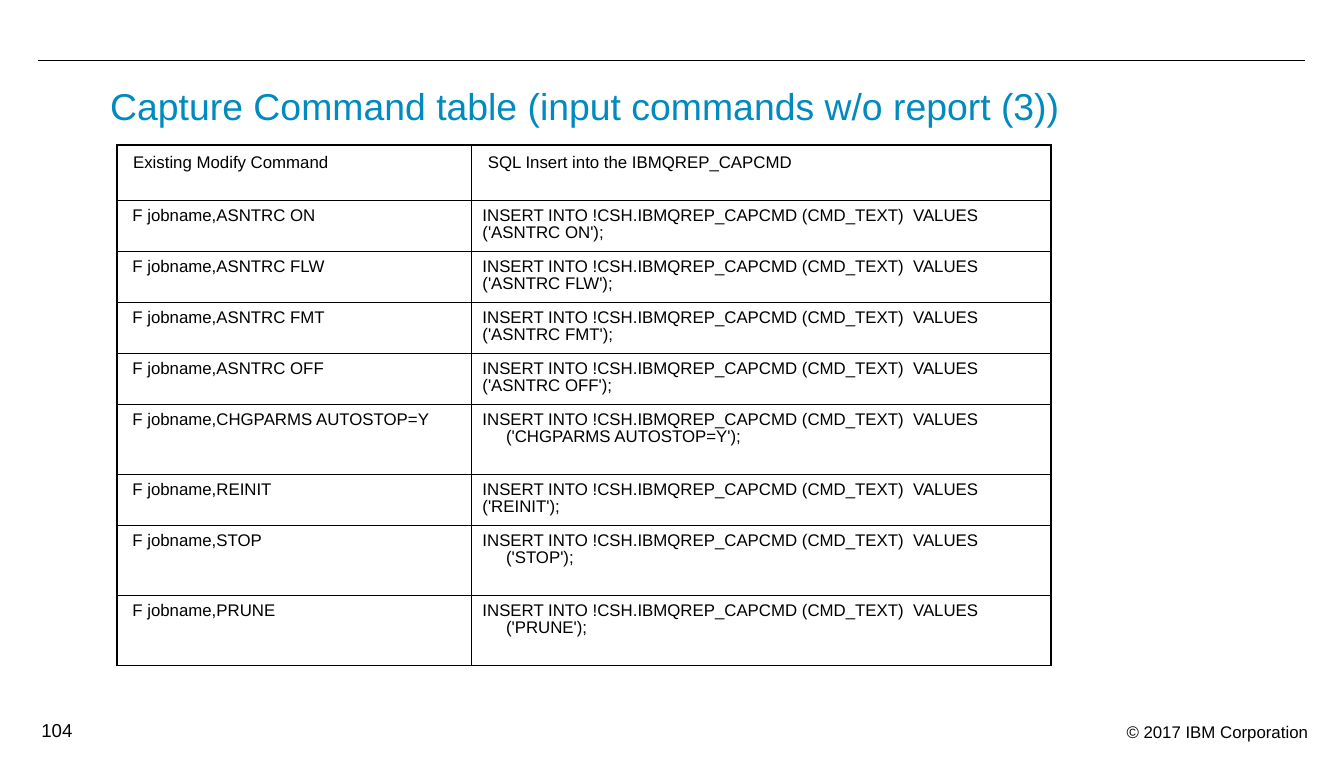
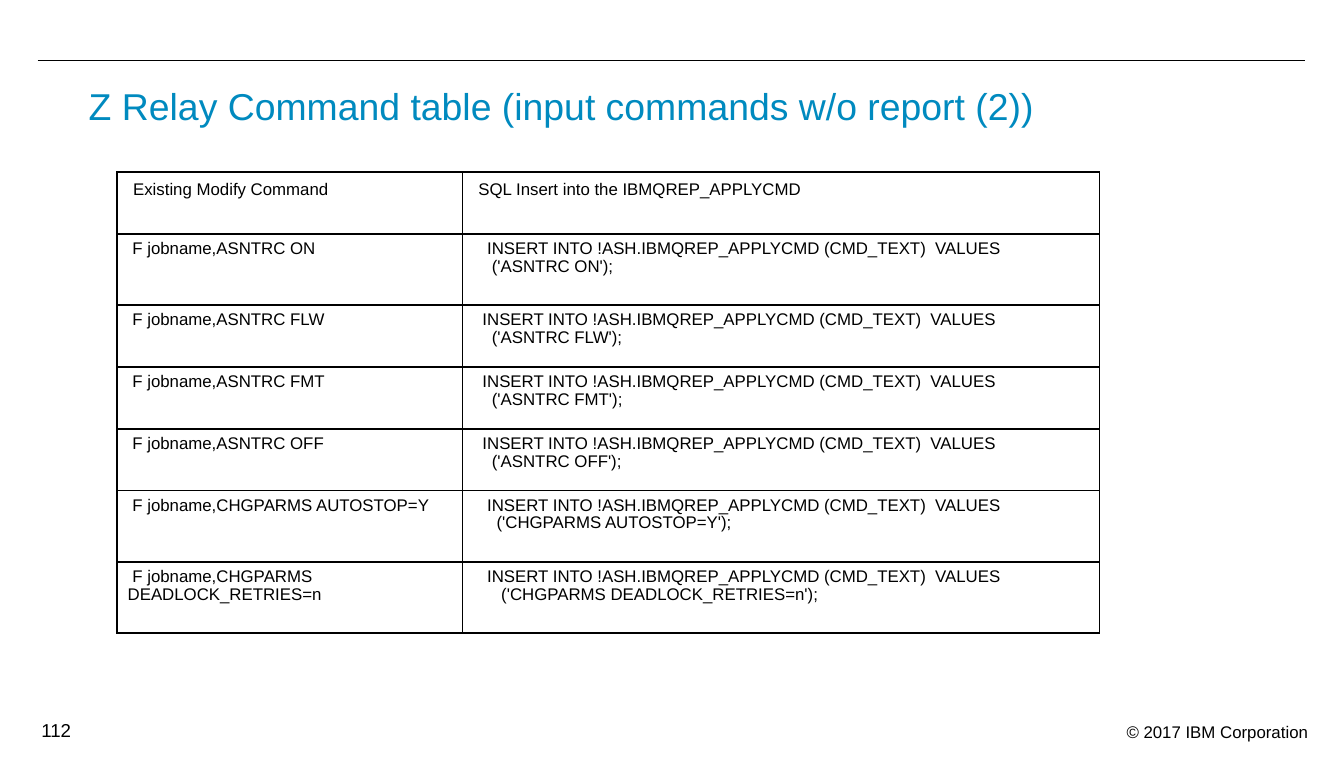
"""Build two slides that map modify commands to their SQL inserts."""
from dataclasses import dataclass

from lxml import etree
from pptx import Presentation
from pptx.dml.color import RGBColor
from pptx.enum.shapes import MSO_CONNECTOR
from pptx.enum.text import MSO_ANCHOR, MSO_AUTO_SIZE, PP_ALIGN
from pptx.oxml.ns import qn
from pptx.util import Inches, Pt

STRAIGHT = MSO_CONNECTOR.STRAIGHT
TOP = MSO_ANCHOR.TOP
NO_AUTOSIZE = MSO_AUTO_SIZE.NONE
LEFT, RIGHT = PP_ALIGN.LEFT, PP_ALIGN.RIGHT

BLACK = RGBColor(0x00, 0x00, 0x00)
TITLE_BLUE = RGBColor(0x00, 0x8A, 0xBF)
FONT = "Arial"
TITLE_ONLY_LAYOUT = 5
BORDER_WIDTH = Pt(0.91)
BORDER_TAGS = ("a:lnL", "a:lnR", "a:lnT", "a:lnB")
SPACE_WIDTH = 0.035

TITLE_FORMAT = {"name": FONT, "size": Pt(20), "bold": False, "color": TITLE_BLUE}
CELL_FORMAT = {"name": FONT, "size": Pt(9), "bold": False, "color": BLACK}
NUMBER_FORMAT = {**CELL_FORMAT, "size": Pt(10)}


@dataclass(frozen=True)
class Line:
    """A line of text with its first-line indent in inches."""

    text: str
    indent: float = 0


@dataclass(frozen=True)
class Command:
    """A command with its row height and the indents of its SQL, in spaces."""

    name: str
    height: float
    insert_indent: int = 0
    values_indent: int | None = None


@dataclass(frozen=True)
class CommandPage:
    """The content and layout of one command table slide."""

    number: int
    title: Line
    title_left: float
    table_top: float
    column_widths: tuple[float, float]
    header_height: float
    schema: str
    table_name: str
    commands: tuple[Command, ...]


PAGES = (
    CommandPage(
        104, Line("Capture Command table (input commands w/o report (3))", 0.14),
        0.61, 1.08, (2.64, 4.31), 0.41, "!CSH", "IBMQREP_CAPCMD",
        (
            Command("ASNTRC ON", 0.38),
            Command("ASNTRC FLW", 0.38),
            Command("ASNTRC FMT", 0.38),
            Command("ASNTRC OFF", 0.38),
            Command("CHGPARMS AUTOSTOP=Y", 0.52, 0, 5),
            Command("REINIT", 0.38),
            Command("STOP", 0.52, 0, 5),
            Command("PRUNE", 0.52, 0, 5),
        ),
    ),
    CommandPage(
        112, Line("Z Relay Command table (input commands w/o report (2))"),
        0.59, 1.28, (2.57, 4.74), 0.46, "!ASH", "IBMQREP_APPLYCMD",
        (
            Command("ASNTRC ON", 0.53, 3, 4),
            Command("ASNTRC FLW", 0.46, 2, 4),
            Command("ASNTRC FMT", 0.46, 2, 4),
            Command("ASNTRC OFF", 0.46, 2, 4),
            Command("CHGPARMS AUTOSTOP=Y", 0.53, 3, 5),
            Command("CHGPARMS DEADLOCK_RETRIES=n", 0.53, 3, 6),
        ),
    ),
)


def write_lines(frame, lines: list[Line], text_format: dict,
                spacing: float = 1.0, alignment=LEFT) -> None:
    """Write one formatted paragraph per line."""
    for index, line in enumerate(lines):
        para = frame.add_paragraph() if index else frame.paragraphs[0]
        para.alignment = alignment
        para.line_spacing = spacing
        para.space_before = Pt(0)
        properties = para._p.get_or_add_pPr()
        properties.set("marL", "0")
        properties.set("indent", str(Inches(line.indent)))
        span = para.add_run()
        span.text = line.text
        for name, value in text_format.items():
            if name == "color":
                span.font.color.rgb = value
            else:
                setattr(span.font, name, value)


def set_frame(frame, horizontal: float, vertical: float) -> None:
    """Give a text frame its margins, wrapping and anchor."""
    settings = {
        "margin_left": Inches(horizontal), "margin_right": Inches(horizontal),
        "margin_top": Inches(vertical), "margin_bottom": Inches(vertical),
        "word_wrap": True, "auto_size": NO_AUTOSIZE, "vertical_anchor": TOP,
    }
    for name, value in settings.items():
        setattr(frame, name, value)


def add_title(page, content: CommandPage) -> None:
    """Place and fill the title placeholder."""
    title = page.shapes.title
    title.left, title.top = Inches(content.title_left), Inches(0.6)
    title.width, title.height = Inches(7.53), Inches(0.36)
    set_frame(title.text_frame, 0.07, 0.04)
    write_lines(title.text_frame, [content.title], TITLE_FORMAT, 0.95)


def add_footer_text(page, text: str, left: float, top: float, width: float,
                    height: float, text_format: dict, alignment=LEFT) -> None:
    """Add one text box of the footer."""
    box = page.shapes.add_textbox(Inches(left), Inches(top), Inches(width), Inches(height))
    set_frame(box.text_frame, 0.1, 0.05)
    write_lines(box.text_frame, [Line(text)], text_format, alignment=alignment)


def add_frame(page, number: int) -> None:
    """Add the top rule, copyright line and page number."""
    rule = page.shapes.add_connector(
        STRAIGHT, Inches(0.28), Inches(0.45), Inches(9.71), Inches(0.45))
    rule.line.color.rgb = BLACK
    rule.line.width = Pt(0.75)
    etree.SubElement(rule._element.spPr, qn("a:effectLst"))
    add_footer_text(page, "© 2017 IBM Corporation", 6.49, 5.32, 3.34, 0.25,
                    CELL_FORMAT, RIGHT)
    add_footer_text(page, str(number), 0.21, 5.3, 0.6, 0.2, NUMBER_FORMAT)


def add_borders(cell) -> None:
    """Draw a solid border on all sides of a cell."""
    properties = cell._tc.get_or_add_tcPr()
    for tag in BORDER_TAGS:
        border = etree.SubElement(properties, qn(tag), w=str(BORDER_WIDTH))
        fill = etree.SubElement(border, qn("a:solidFill"))
        etree.SubElement(fill, qn("a:srgbClr"), val=str(BLACK))


def fill_cell(cell, lines: list[Line], top_margin: float) -> None:
    """Format a table cell and write its lines."""
    settings = {
        "margin_left": Inches(0.08), "margin_right": Inches(0.08),
        "margin_top": Inches(top_margin), "margin_bottom": Inches(0.04),
        "vertical_anchor": TOP,
    }
    for name, value in settings.items():
        setattr(cell, name, value)
    add_borders(cell)
    cell.fill.background()
    write_lines(cell.text_frame, lines, CELL_FORMAT, 0.93)


def sql_lines(content: CommandPage, command: Command) -> list[Line]:
    """Return the SQL insert for a command, in one or two paragraphs."""
    insert = f"INSERT INTO {content.schema}.{content.table_name} (CMD_TEXT)  VALUES"
    values = f"('{command.name}');"
    if command.values_indent is None:
        return [Line(f"{insert} {values}")]
    return [Line(insert, command.insert_indent * SPACE_WIDTH),
            Line(values, command.values_indent * SPACE_WIDTH)]


def add_command_table(page, content: CommandPage) -> None:
    """Add the table of commands and SQL inserts."""
    heights = [content.header_height] + [command.height for command in content.commands]
    table = page.shapes.add_table(
        len(heights), len(content.column_widths), Inches(0.87), Inches(content.table_top),
        Inches(sum(content.column_widths)), Inches(sum(heights))).table
    table.first_row = False
    table.horz_banding = False
    for column, width in zip(table.columns, content.column_widths):
        column.width = Inches(width)
    rows = [[[Line("Existing Modify Command", 0.04)],
             [Line(f"SQL Insert into the {content.table_name}", 0.04)]]]
    rows += [[[Line(f"F jobname,{command.name}", SPACE_WIDTH)], sql_lines(content, command)]
             for command in content.commands]
    for index, (row, height) in enumerate(zip(rows, heights)):
        table.rows[index].height = Inches(height)
        for column, lines in enumerate(row):
            fill_cell(table.cell(index, column), lines, 0.05 if index else 0.07)


def main() -> None:
    """Build and save the deck."""
    deck = Presentation()
    deck.slide_width, deck.slide_height = Inches(10), Inches(5.63)
    for content in PAGES:
        page = deck.slides.add_slide(deck.slide_layouts[TITLE_ONLY_LAYOUT])
        add_frame(page, content.number)
        add_title(page, content)
        add_command_table(page, content)
    deck.save("out.pptx")


if __name__ == "__main__":
    main()
